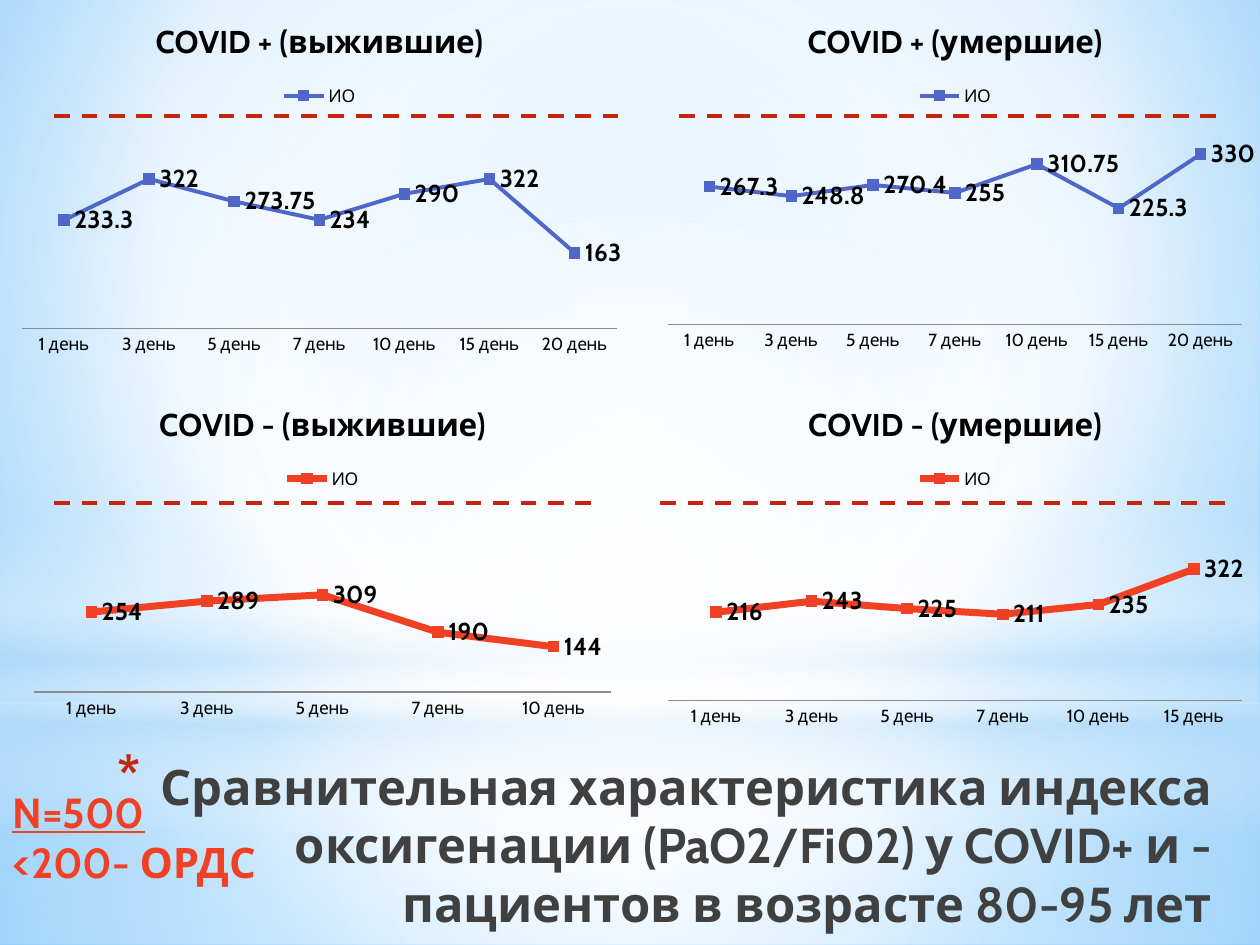
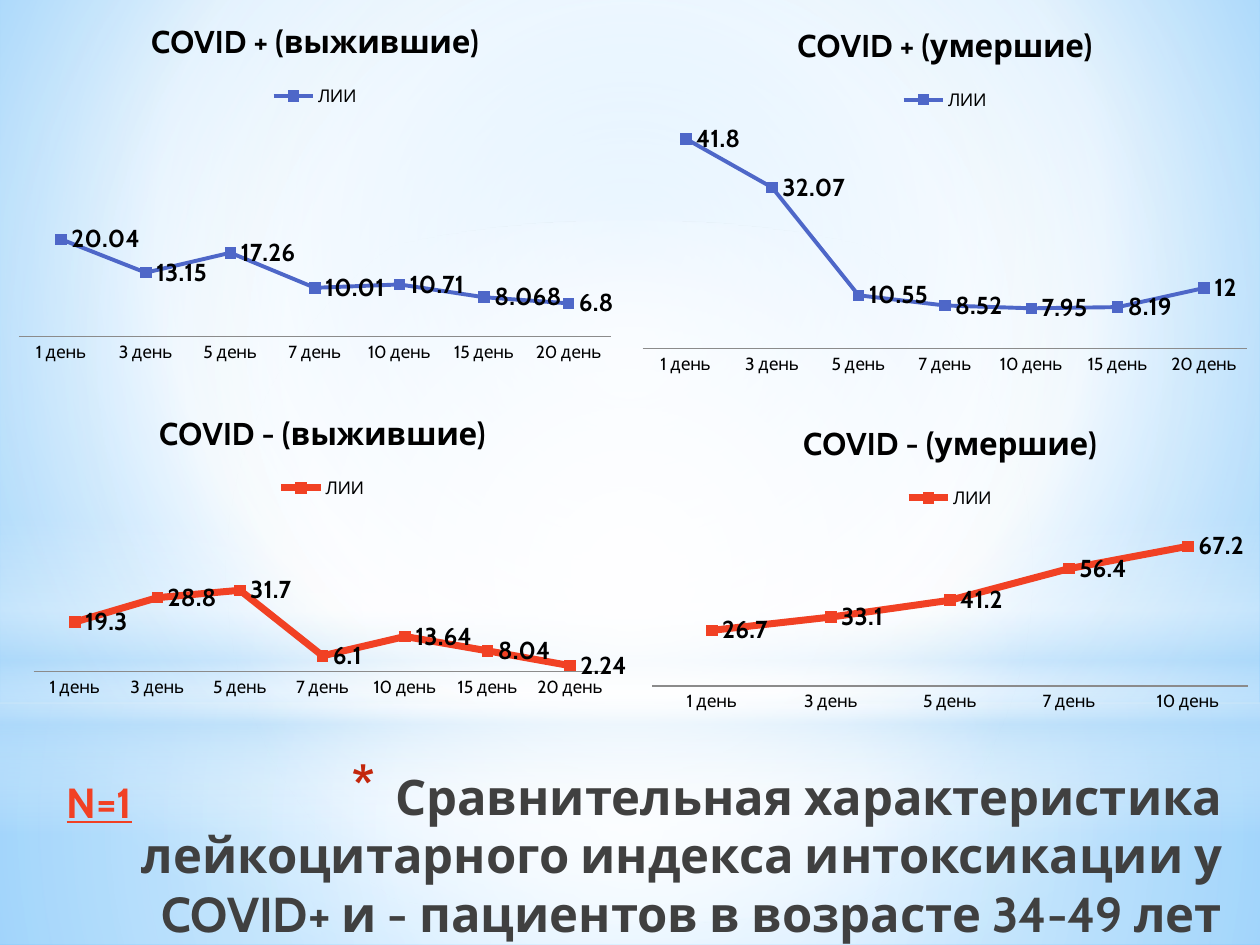
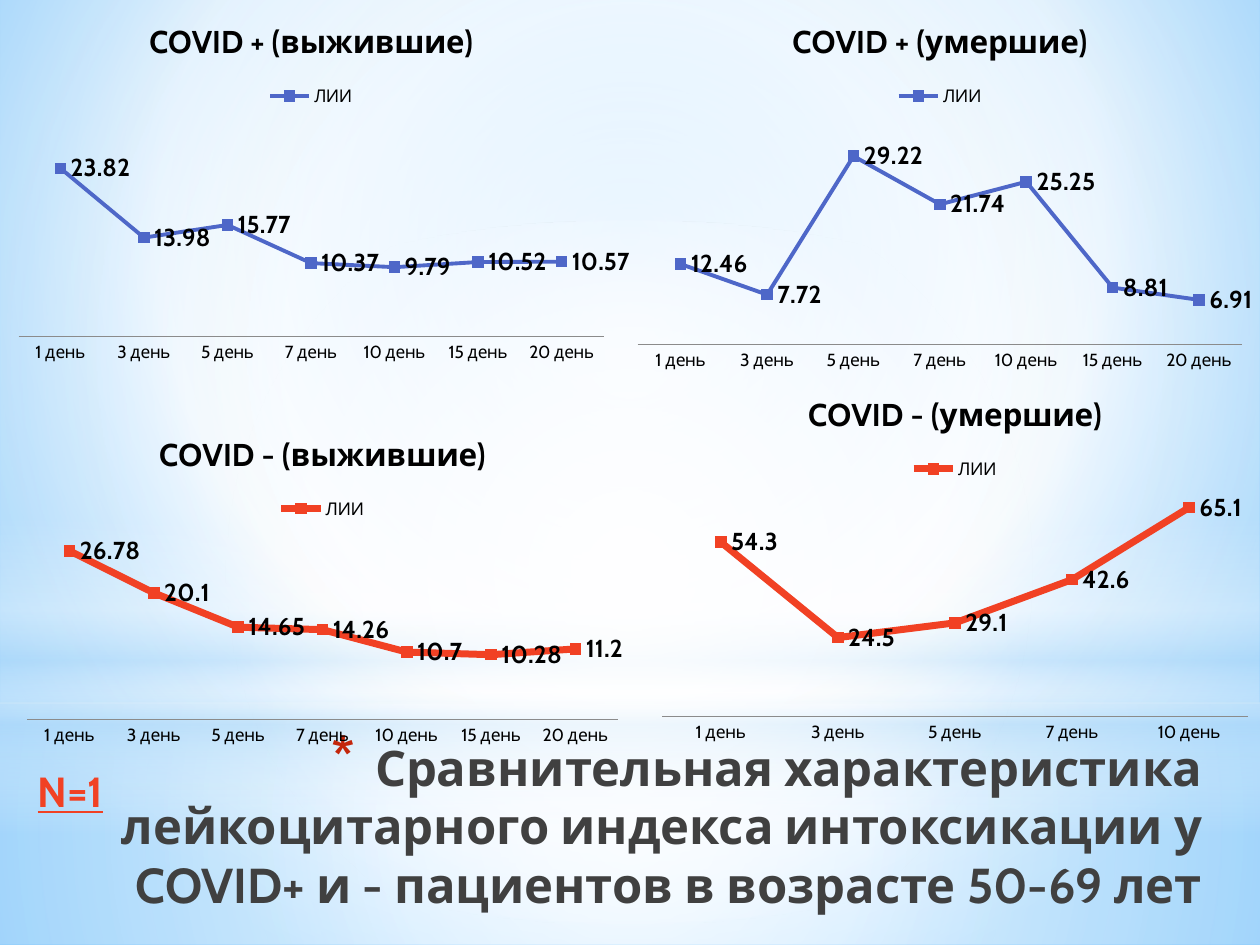
from dataclasses import dataclass

from lxml import etree
from pptx import Presentation
from pptx.chart.data import CategoryChartData
from pptx.dml.color import RGBColor
from pptx.enum.chart import (XL_CHART_TYPE, XL_LABEL_POSITION, XL_LEGEND_POSITION,
                             XL_MARKER_STYLE, XL_TICK_MARK)
from pptx.enum.dml import MSO_LINE
from pptx.enum.shapes import MSO_CONNECTOR, MSO_SHAPE
from pptx.enum.text import MSO_ANCHOR, MSO_AUTO_SIZE, PP_ALIGN
from pptx.oxml.ns import qn
from pptx.util import Inches, Pt

LINE_MARKERS = XL_CHART_TYPE.LINE_MARKERS
SQUARE = XL_MARKER_STYLE.SQUARE
LABEL_RIGHT = XL_LABEL_POSITION.RIGHT
LEGEND_TOP = XL_LEGEND_POSITION.TOP
NO_TICK = XL_TICK_MARK.NONE
DASH = MSO_LINE.DASH
STRAIGHT = MSO_CONNECTOR.STRAIGHT
RECTANGLE = MSO_SHAPE.RECTANGLE
OVAL = MSO_SHAPE.OVAL
TOP = MSO_ANCHOR.TOP
NO_AUTOFIT = MSO_AUTO_SIZE.NONE
LEFT, RIGHT = PP_ALIGN.LEFT, PP_ALIGN.RIGHT

FONT = "Cabin"
BLACK = RGBColor(0x00, 0x00, 0x00)
WHITE = RGBColor(0xFF, 0xFF, 0xFF)
TITLE_GREY = RGBColor(0x40, 0x40, 0x40)
AXIS_GREY = RGBColor(0x8B, 0x8B, 0x8B)
BLUE = RGBColor(0x4E, 0x67, 0xC8)
ORANGE = RGBColor(0xF1, 0x41, 0x24)
DARK_RED = RGBColor(0xC3, 0x26, 0x0C)
PALE_BLUE = RGBColor(0xB4, 0xDC, 0xFA)
SKY_BLUE = RGBColor(0x9E, 0xD5, 0xFF)
DEEP_SKY = RGBColor(0x5B, 0xB9, 0xFF)

DAYS = [f"{day} день" for day in (1, 3, 5, 7, 10, 15, 20)]
CENTRE = (50, 50, 50, 50)
TITLE_ONLY = 5
TITLE_LEFT = 0.35
HANGING = 0.35

Box = tuple[float, float, float, float]
Stop = tuple[int, RGBColor, int]  # position, colour, opacity in percent


@dataclass
class Group:
    """Patients that share one corner of every slide."""
    title: str
    color: RGBColor
    line_width: float


@dataclass
class Panel:
    box: Box
    values: list[float]
    plot: tuple[float, float] | None = None  # top and height as parts of the chart


@dataclass
class Norm:
    """Dashed line of the normal level."""
    left: float
    right: float
    top: float


@dataclass
class Page:
    title: str
    title_box: Box
    index_name: str
    panels: list[Panel]
    note_lines: list[str]
    note_box: Box
    norms: list[Norm]


@dataclass
class Glow:
    """Gradient shape behind every slide; a focus of None means top to bottom."""
    preset: MSO_SHAPE
    box: Box
    stops: list[Stop]
    focus: tuple[int, int, int, int] | None = CENTRE


GROUPS = [
    Group("COVID + (выжившие)", BLUE, 2.25),
    Group("COVID + (умершие)", BLUE, 2.25),
    Group("COVID - (выжившие)", ORANGE, 4),
    Group("COVID - (умершие)", ORANGE, 4),
]

BACKGROUND_STOPS = [(0, SKY_BLUE, 100), (60, WHITE, 100), (100, DEEP_SKY, 100)]
GLOWS = [
    Glow(RECTANGLE, (0, 5.58, 10, 1.92), [(0, WHITE, 91), (37, WHITE, 76), (100, PALE_BLUE, 79)]),
    Glow(RECTANGLE, (0, 0, 10, 5.58), [(0, WHITE, 89), (48, WHITE, 62), (100, PALE_BLUE, 79)]),
    Glow(RECTANGLE, (0, 4.12, 10, 2.5),
         [(0, WHITE, 0), (29, WHITE, 30), (45, PALE_BLUE, 40),
          (55, WHITE, 26), (65, PALE_BLUE, 60), (100, WHITE, 0)], None),
    Glow(OVAL, (0, 1.75, 10, 5.58), [(0, WHITE, 100), (56, WHITE, 0)]),
]

LEUKOCYTE_TITLE = ("Сравнительная характеристика лейкоцитарного индекса интоксикации "
                   "у COVID+ и - пациентов в возрасте {} лет")

PAGES = [
    Page(
        "Сравнительная характеристика индекса оксигенации (PaO2/FiО2) "
        "у COVID+ и - пациентов в возрасте 80-95 лет",
        (TITLE_LEFT, 5.95, 9.37, 1.34), "ИО",
        [
            Panel((0.02, 0, 5.03, 2.93), [233.3, 322, 273.75, 234, 290, 322, 163], (0.45, 0.44)),
            Panel((5.16, 0, 4.84, 2.93),
                  [267.3, 248.8, 270.4, 255, 310.75, 225.3, 330], (0.39, 0.49)),
            Panel((0.12, 3.04, 4.88, 2.82), [254, 289, 309, 190, 144], (0.56, 0.31)),
            Panel((5.16, 3.04, 4.84, 2.83), [216, 243, 225, 211, 235, 322], (0.49, 0.4)),
        ],
        ["N=500", "<200- ОРДС"], (0, 6.19, 2.17, 0.91),
        [Norm(0.43, 4.92, 0.92), Norm(5.39, 9.72, 0.92),
         Norm(0.43, 4.76, 3.99), Norm(5.24, 9.72, 3.99)],
    ),
    Page(
        LEUKOCYTE_TITLE.format("34-49"), (TITLE_LEFT, 6.03, 9.45, 1.26), "ЛИИ",
        [
            Panel((0, 0, 5, 3), [20.04, 13.15, 17.26, 10.01, 10.71, 8.068, 6.8], (0.57, 0.32)),
            Panel((5, 0.03, 5, 3), [41.8, 32.07, 10.55, 8.52, 7.95, 8.19, 12]),
            Panel((0.12, 3.12, 4.88, 2.54),
                  [19.3, 28.8, 31.7, 6.1, 13.64, 8.04, 2.24], (0.59, 0.28)),
            Panel((5.08, 3.2, 4.92, 2.5), [26.7, 33.1, 41.2, 56.4, 67.2]),
        ],
        ["N=1"], (0.43, 6.11, 1.65, 0.5), [],
    ),
    Page(
        LEUKOCYTE_TITLE.format("50-69"), (TITLE_LEFT, 5.8, 9.29, 1.42), "ЛИИ",
        [
            Panel((0, 0, 5, 3), [23.82, 13.98, 15.77, 10.37, 9.79, 10.52, 10.57], (0.33, 0.56)),
            Panel((4.96, 0, 5, 3), [12.46, 7.72, 29.22, 21.74, 25.25, 8.81, 6.91]),
            Panel((0.12, 3.28, 4.88, 2.69), [26.78, 20.1, 14.65, 14.26, 10.7, 10.28, 11.2]),
            Panel((5.16, 2.96, 4.84, 2.99), [54.3, 24.5, 29.1, 42.6, 65.1]),
        ],
        ["N=1"], (0.2, 6.03, 1.34, 0.5), [],
    ),
]


def inches(box: Box) -> list[int]:
    return [Inches(length) for length in box]


def add_child(parent, tag: str, **attributes):
    return etree.SubElement(parent, qn(tag), {name: str(value) for name, value in attributes.items()})


def replace_solid_fill(properties, stops: list[Stop], focus) -> None:
    """Put a gradient where the solid fill of the properties element stands."""
    gradient = etree.Element(qn("a:gradFill"), rotWithShape="1")
    stop_list = add_child(gradient, "a:gsLst")
    for position, color, opacity in stops:
        stop = add_child(stop_list, "a:gs", pos=position * 1000)
        add_child(add_child(stop, "a:srgbClr", val=color), "a:alpha", val=opacity * 1000)
    if focus is None:
        add_child(gradient, "a:lin", ang=90 * 60000, scaled=0)
    else:
        sides = {side: part * 1000 for side, part in zip("ltrb", focus)}
        add_child(add_child(gradient, "a:path", path="circle"), "a:fillToRect", **sides)
    properties.replace(properties.find(qn("a:solidFill")), gradient)


def build_master(presentation, slide) -> None:
    """Draw the shared backdrop; shapes are made on a slide and moved to the master."""
    master = presentation.slide_master
    master.background.fill.solid()
    master.background.fill.fore_color.rgb = WHITE
    properties = next(master.element.iter(qn("p:bgPr")))
    replace_solid_fill(properties, BACKGROUND_STOPS, (20, 10, 20, 60))
    tree = master.element.cSld.spTree
    for position, glow in enumerate(GLOWS, start=2):
        shape = slide.shapes.add_shape(glow.preset, *inches(glow.box))
        shape.shadow.inherit = False
        shape.line.fill.background()
        shape.fill.solid()
        shape.fill.fore_color.rgb = WHITE
        replace_solid_fill(shape.element.spPr, glow.stops, glow.focus)
        tree.insert(position, shape.element)


def format_font(font, size: float, color: RGBColor, bold: bool = False,
                underline: bool = False) -> None:
    font.name = FONT
    font.size = Pt(size)
    font.color.rgb = color
    font.bold = bold
    font.underline = underline


def write_text(paragraph, text: str, *, size: float, color: RGBColor, bold: bool = True,
               underline: bool = False, align=LEFT) -> None:
    paragraph.alignment = align
    run = paragraph.add_run()
    run.text = text
    format_font(run.font, size, color, bold, underline)


def add_title(slide, page: Page) -> None:
    title = slide.shapes.title
    title.left, title.top, title.width, title.height = inches(page.title_box)
    frame = title.text_frame
    frame.word_wrap = True
    frame.auto_size = NO_AUTOFIT
    frame.vertical_anchor = TOP
    paragraph = frame.paragraphs[0]
    write_text(paragraph, page.title, size=28, color=TITLE_GREY, align=RIGHT)
    properties = paragraph._p.get_or_add_pPr()
    properties.set("marL", str(Inches(HANGING)))
    properties.set("indent", str(-Inches(HANGING)))
    add_child(add_child(properties, "a:buClr"), "a:srgbClr", val=DARK_RED)
    add_child(properties, "a:buSzPct", val=128000)
    add_child(properties, "a:buChar", char="*")


def place_plot(chart, top: float, height: float) -> None:
    """Fix the inner plot area of the chart."""
    plot_area = chart._chartSpace.chart.plotArea
    for automatic in plot_area.findall(qn("c:layout")):
        plot_area.remove(automatic)
    layout = etree.Element(qn("c:layout"))
    manual = add_child(layout, "c:manualLayout")
    add_child(manual, "c:layoutTarget", val="inner")
    add_child(manual, "c:xMode", val="edge")
    add_child(manual, "c:yMode", val="edge")
    for name, part in zip("xywh", (0.03, top, 0.94, height)):
        add_child(manual, f"c:{name}", val=part)
    plot_area.insert(0, layout)


def add_index_chart(slide, panel: Panel, group: Group, index_name: str) -> None:
    data = CategoryChartData()
    data.categories = DAYS[:len(panel.values)]
    data.add_series(index_name, panel.values)
    chart = slide.shapes.add_chart(LINE_MARKERS, *inches(panel.box), data).chart
    format_font(chart.font, 10, BLACK)

    chart.has_title = True
    write_text(chart.chart_title.text_frame.paragraphs[0], group.title, size=18, color=BLACK,
               align=None)
    chart.chart_title.include_in_layout = False
    chart.has_legend = True
    chart.legend.position = LEGEND_TOP
    chart.legend.include_in_layout = False

    chart.value_axis.has_major_gridlines = False
    chart.value_axis.visible = False
    chart.category_axis.major_tick_mark = NO_TICK
    chart.category_axis.minor_tick_mark = NO_TICK
    chart.category_axis.format.line.color.rgb = AXIS_GREY
    chart.category_axis.format.line.width = Pt(0.75)

    plot = chart.plots[0]
    plot.vary_by_categories = False
    series = plot.series[0]
    series.smooth = False
    series.format.line.color.rgb = group.color
    series.format.line.width = Pt(group.line_width)
    series.marker.style = SQUARE
    series.marker.size = 6
    series.marker.format.fill.solid()
    series.marker.format.fill.fore_color.rgb = group.color
    series.marker.format.line.color.rgb = group.color

    labels = series.data_labels
    labels.show_value = True
    labels.position = LABEL_RIGHT
    format_font(labels.font, 14, BLACK, bold=True)
    if panel.plot:
        place_plot(chart, *panel.plot)


def add_note(slide, page: Page) -> None:
    """Write the patient count, underlined, and any remark below it."""
    frame = slide.shapes.add_textbox(*inches(page.note_box)).text_frame
    frame.word_wrap = True
    for number, line in enumerate(page.note_lines):
        paragraph = frame.add_paragraph() if number else frame.paragraphs[0]
        write_text(paragraph, line, size=24, color=ORANGE, underline=number == 0)


def add_norm(slide, norm: Norm) -> None:
    connector = slide.shapes.add_connector(
        STRAIGHT, *inches((norm.left, norm.top, norm.right, norm.top)))
    connector.line.color.rgb = DARK_RED
    connector.line.width = Pt(2.25)
    connector.line.dash_style = DASH
    add_child(connector.element.spPr, "a:effectLst")


def add_page(presentation, page: Page):
    slide = presentation.slides.add_slide(presentation.slide_layouts[TITLE_ONLY])
    add_title(slide, page)
    for panel, group in zip(page.panels, GROUPS):
        add_index_chart(slide, panel, group, page.index_name)
    add_note(slide, page)
    for norm in page.norms:
        add_norm(slide, norm)
    return slide


def main() -> None:
    presentation = Presentation()
    presentation.slide_width = Inches(10)
    presentation.slide_height = Inches(7.5)
    slides = [add_page(presentation, page) for page in PAGES]
    build_master(presentation, slides[0])
    presentation.save("out.pptx")


if __name__ == "__main__":
    main()
